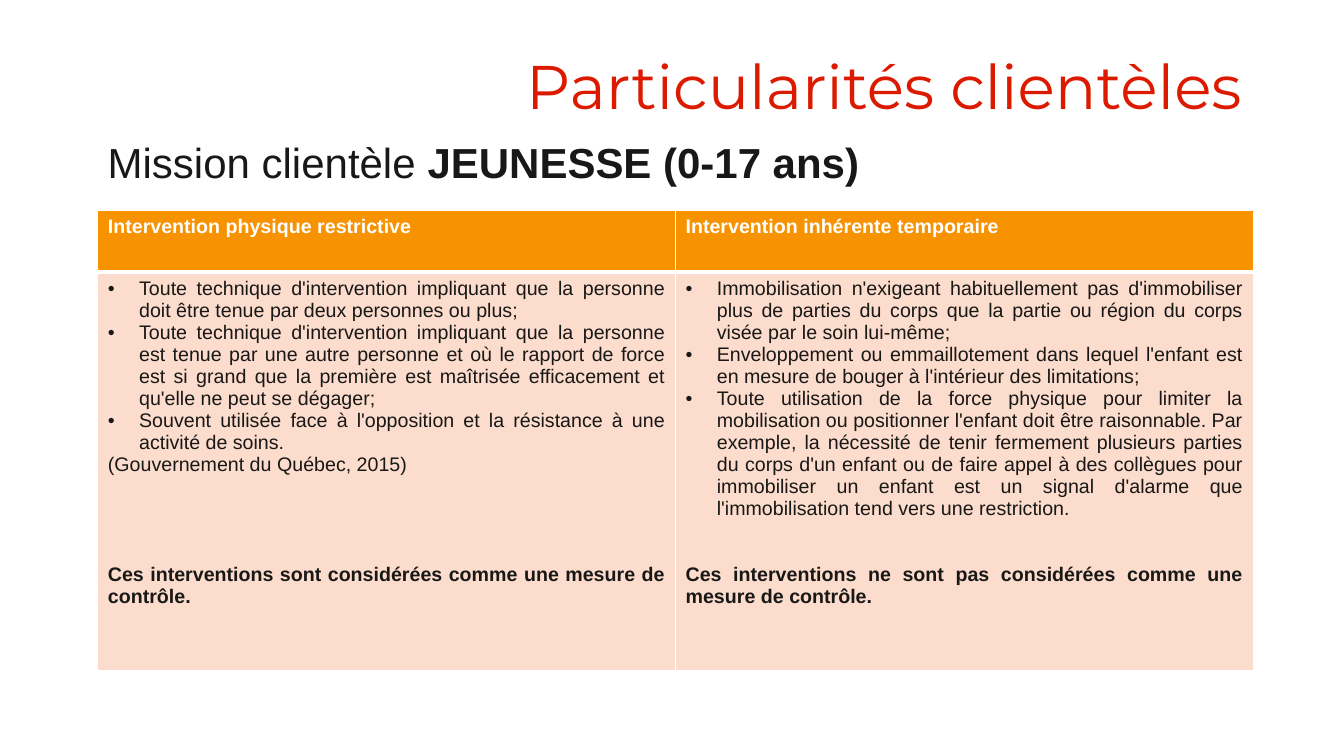
from lxml.etree import SubElement
from pptx import Presentation
from pptx.dml.color import RGBColor
from pptx.enum.text import MSO_ANCHOR as Anchor, MSO_AUTO_SIZE as AutoSize, PP_ALIGN as Align
from pptx.oxml.ns import qn
from pptx.util import Inches, Pt

RED = RGBColor(0xDB, 0x1A, 0x00)
INK = RGBColor(0x18, 0x18, 0x17)
WHITE = RGBColor(0xFF, 0xFF, 0xFF)
ORANGE = RGBColor(0xF7, 0x92, 0x00)
PEACH = RGBColor(0xFC, 0xDC, 0xCC)

TABLE_SIZE = 14
LINE_HEIGHT = 15.75  # points taken by one line of table text

# Each column: heading, bullets, source, conclusion, empty lines above the conclusion
COLUMNS = [
    ("Intervention physique restrictive",
     ["Toute technique d'intervention impliquant que la personne doit être tenue par "
      "deux personnes ou plus;",
      "Toute technique d'intervention impliquant que la personne est tenue par une autre "
      "personne et où le rapport de force est si grand que la première est maîtrisée "
      "efficacement et qu'elle ne peut se dégager;",
      "Souvent utilisée face à l'opposition et la résistance à une activité de soins."],
     "(Gouvernement du Québec, 2015)",
     "Ces interventions sont considérées comme une mesure de contrôle.", 4),
    ("Intervention inhérente temporaire",
     ["Immobilisation n'exigeant habituellement pas d'immobiliser plus de parties du corps "
      "que la partie ou région du corps visée par le soin lui-même;",
      "Enveloppement ou emmaillotement dans lequel l'enfant est en mesure de bouger à "
      "l'intérieur des limitations;",
      "Toute utilisation de la force physique pour limiter la mobilisation ou positionner "
      "l'enfant doit être raisonnable. Par exemple, la nécessité de tenir fermement plusieurs "
      "parties du corps d'un enfant ou de faire appel à des collègues pour immobiliser un "
      "enfant est un signal d'alarme que l'immobilisation tend vers une restriction."],
     None,
     "Ces interventions ne sont pas considérées comme une mesure de contrôle.", 2),
]


def style_span(span, size, color, bold=False, name="Arial"):
    span.font.name = name
    span.font.size = Pt(size)
    span.font.bold = bold
    span.font.color.rgb = color


def place(shape, left, top, width, height):
    shape.left, shape.top = Inches(left), Inches(top)
    shape.width, shape.height = Inches(width), Inches(height)


def add_title(page, left, top, width, height):
    title = page.shapes.title
    place(title, left, top, width, height)
    frame = title.text_frame
    frame.text = "Particularités clientèles"
    frame.auto_size = AutoSize.NONE
    frame.vertical_anchor = Anchor.MIDDLE
    para = frame.paragraphs[0]
    para.alignment = Align.RIGHT
    para.line_spacing = 0.9
    style_span(para.runs[0], 44, RED, name="Montserrat")


def add_subtitle(page, left, top, width, height):
    box = page.shapes.add_textbox(Inches(left), Inches(top), Inches(width), Inches(height))
    box.text_frame.word_wrap = True
    para = box.text_frame.paragraphs[0]
    para.line_spacing = 0.9
    for text, bold in (("Mission clientèle ", False), ("JEUNESSE (0-17 ans)", True)):
        span = para.add_run()
        span.text = text
        style_span(span, 30, INK, bold)


def style_cell(cell, fill, top_width, bottom_width):
    properties = cell._tc.get_or_add_tcPr()
    for side, width in (("L", 1), ("R", 1), ("T", top_width), ("B", bottom_width)):
        line = SubElement(properties, qn(f"a:ln{side}"), w=str(Pt(width)))
        color = SubElement(SubElement(line, qn("a:solidFill")), qn("a:srgbClr"))
        color.set("val", str(WHITE))
    cell.fill.solid()
    cell.fill.fore_color.rgb = fill


def add_bullet(para):
    properties = para._p.get_or_add_pPr()
    properties.set("marL", str(Inches(0.31)))
    properties.set("indent", str(Inches(-0.31)))
    SubElement(properties, qn("a:buFont"), typeface="Arial")
    SubElement(properties, qn("a:buChar"), char="•")


def fill_body_cell(cell, bullets, source, conclusion, gap_lines):
    frame = cell.text_frame
    lines = bullets + ([source] if source else []) + [conclusion]
    frame.text = "\n".join(lines)
    for index, para in enumerate(frame.paragraphs):
        is_conclusion = index == len(lines) - 1
        para.alignment = Align.JUSTIFY
        if index < len(bullets):
            add_bullet(para)
        elif is_conclusion:
            para.space_before = Pt(gap_lines * LINE_HEIGHT)
        style_span(para.runs[0], TABLE_SIZE, INK, bold=is_conclusion)


def add_comparison(page, left, top, width, row_heights):
    table = page.shapes.add_table(
        len(row_heights), len(COLUMNS), Inches(left), Inches(top),
        Inches(width), Inches(sum(row_heights))).table
    for row, height in zip(table.rows, row_heights):
        row.height = Inches(height)
    for index, (heading, *content) in enumerate(COLUMNS):
        table.columns[index].width = Inches(width / len(COLUMNS))
        header, body = table.cell(0, index), table.cell(1, index)
        style_cell(header, ORANGE, 1, 3)
        style_cell(body, PEACH, 3, 1)
        header.text_frame.text = heading
        style_span(header.text_frame.paragraphs[0].runs[0], TABLE_SIZE, WHITE, bold=True)
        fill_body_cell(body, *content)


def main():
    deck = Presentation()
    deck.slide_width, deck.slide_height = Inches(13.33), Inches(7.5)
    page = deck.slides.add_slide(deck.slide_layouts[5])
    # Heading
    add_title(page, 1.94, 0.4, 10.48, 0.97)
    add_subtitle(page, 0.97, 1.36, 11.45, 0.65)
    # Two kinds of intervention side by side
    add_comparison(page, 0.97, 2.09, 11.46, (0.61, 3.95))
    deck.save("out.pptx")


if __name__ == "__main__":
    main()
